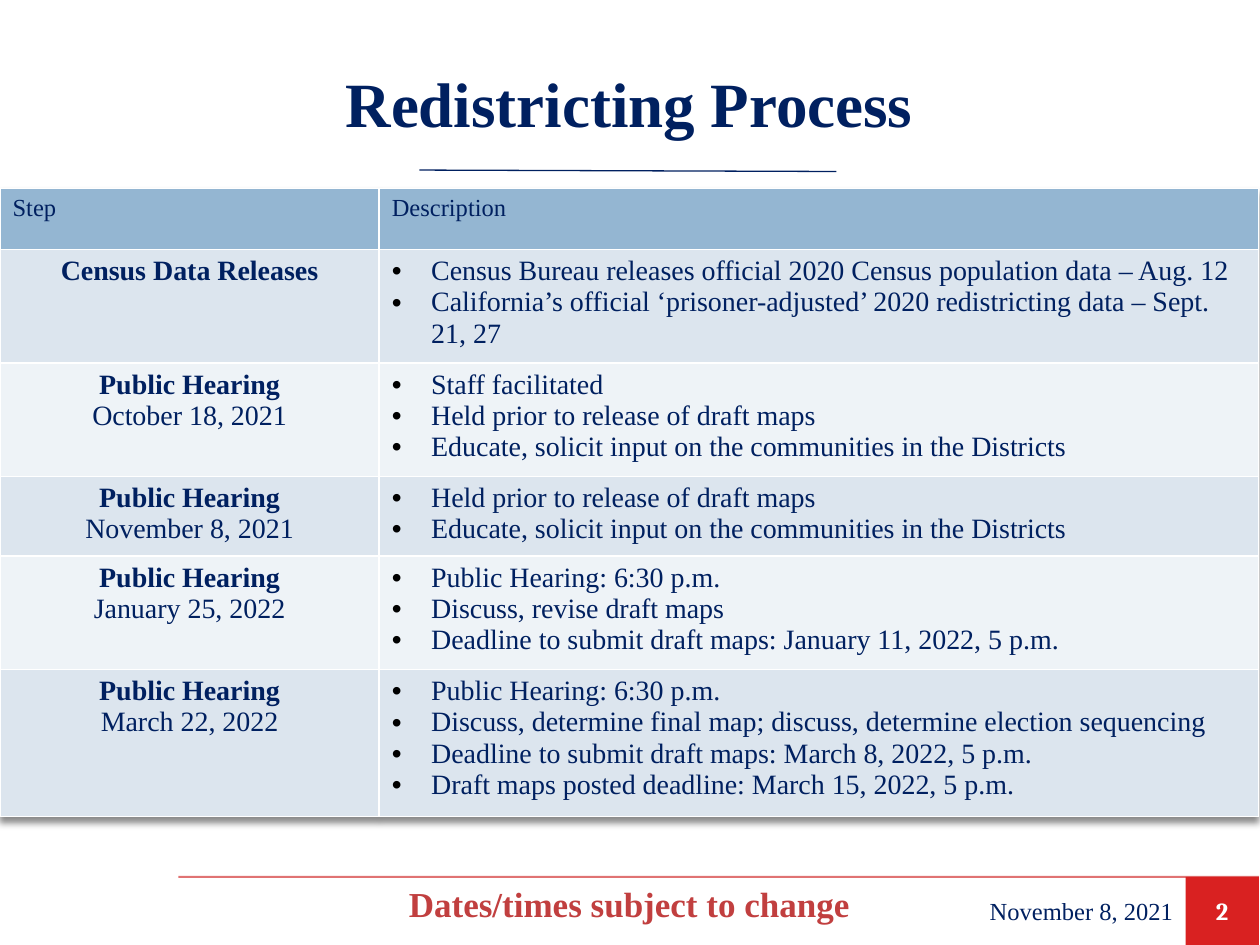
from lxml import etree
from pptx import Presentation
from pptx.dml.color import RGBColor
from pptx.enum import shapes, text
from pptx.oxml import parse_xml
from pptx.oxml.ns import qn
from pptx.util import Pt

INK = {"navy": "002060", "red": "D92121", "rule": "C80000", "note": "C13F3F",
       "head": "94B6D2", "dark": "DCE5EE", "light": "EEF3F7",
       "white": "FFFFFF", "black": "000000"}
NS = 'xmlns:a="http://schemas.openxmlformats.org/drawingml/2006/main"'
SERIF = "Times New Roman"
LEFT, MID, RIGHT = text.PP_ALIGN.LEFT, text.PP_ALIGN.CENTER, text.PP_ALIGN.RIGHT
HEARING = "Public Hearing"
EDUCATE = "Educate, solicit input on the communities in the Districts"
PRIOR = "Held prior to release of draft maps"
TIME = "Public Hearing: 6:30 p.m."

# Row height, step, date, description
STEPS = [
    (60.6, "Census Data Releases", None, [
        "Census Bureau releases official 2020 Census population data – Aug. 12",
        "California’s official ‘prisoner-adjusted’ 2020 redistricting data – Sept. 21, 27"]),
    (60.6, HEARING, "October 18, 2021", ["Staff facilitated", PRIOR, EDUCATE]),
    (43.5, HEARING, "November 8, 2021", [PRIOR, EDUCATE]),
    (60.6, HEARING, "January 25, 2022", [
        TIME, "Discuss, revise draft maps",
        "Deadline to submit draft maps: January 11, 2022, 5 p.m."]),
    (78.3, HEARING, "March 22, 2022", [
        TIME, "Discuss, determine final map; discuss, determine election sequencing",
        "Deadline to submit draft maps: March 8, 2022, 5 p.m.",
        "Draft maps posted deadline: March 15, 2022, 5 p.m."]),
]


def color(name):
    return RGBColor.from_string(INK[name])


def style(para, size, ink="navy", bold=False, align=LEFT, face=SERIF):
    para.alignment = align
    for run in para.runs:
        font = run.font
        font.name, font.size, font.bold = face, Pt(size), bold
        font.color.rgb = color(ink)


def label(slide, box, words, size, anchor=text.MSO_ANCHOR.MIDDLE, **look):
    frame = slide.shapes.add_textbox(*map(Pt, box)).text_frame
    frame.word_wrap = True
    frame.vertical_anchor = anchor
    frame.text = words
    style(frame.paragraphs[0], size, **look)


def rule(slide, start, end, ink, width, alpha=None):
    line = slide.shapes.add_connector(
        shapes.MSO_CONNECTOR.STRAIGHT, *map(Pt, start + end))
    line.line.color.rgb = color(ink)
    line.line.width = Pt(width)
    props = line._element.spPr
    if alpha:
        tone = props.find(".//" + qn("a:srgbClr"))
        etree.SubElement(tone, qn("a:alpha")).set("val", str(alpha * 1000))
    etree.SubElement(props, qn("a:effectLst"))


def bullet(para):
    props = para._p.get_or_add_pPr()
    props.set("marL", str(Pt(22.5)))
    props.set("indent", str(-Pt(22.5)))
    for xml in (f'<a:buClr {NS}><a:srgbClr val="{INK["black"]}"/></a:buClr>',
                f'<a:buFont {NS} typeface="Arial"/>',
                f'<a:buChar {NS} char="•"/>'):
        props.append(parse_xml(xml))


def paint(cell, ink):
    """Fill a cell and give it thin white borders."""
    cell.fill.solid()
    cell.fill.fore_color.rgb = color(ink)
    props = cell._tc.get_or_add_tcPr()
    for i, side in enumerate("LRTB"):
        props.insert(i, parse_xml(
            f'<a:ln{side} {NS} w="{Pt(1)}"><a:solidFill>'
            f'<a:srgbClr val="{INK["white"]}"/></a:solidFill></a:ln{side}>'))


def shade(table):
    """Cast a soft shadow below the table."""
    table._tbl.tblPr.insert(0, parse_xml(
        f'<a:effectLst {NS}><a:outerShdw blurRad="{Pt(4)}" dist="{Pt(3)}" '
        f'dir="5400000" rotWithShape="0"><a:srgbClr val="{INK["black"]}">'
        f'<a:alpha val="45000"/></a:srgbClr></a:outerShdw></a:effectLst>'))


def process(slide, box):
    left, top, width, head = box
    high = head + sum(step[0] for step in STEPS)
    table = slide.shapes.add_table(
        len(STEPS) + 1, 2, Pt(left), Pt(top), Pt(width), Pt(high)).table
    shade(table)
    first = 216.7
    table.columns[0].width = Pt(first)
    table.columns[1].width = Pt(width - first)
    table.rows[0].height = Pt(head)
    for col, words in enumerate(("Step", "Description")):
        cell = table.cell(0, col)
        cell.text = words
        style(cell.text_frame.paragraphs[0], 14)
        paint(cell, "head")
    for row, (tall, name, date, points) in enumerate(STEPS, 1):
        table.rows[row].height = Pt(tall)
        step, about = table.cell(row, 0), table.cell(row, 1)
        step.text = f"{name}\n{date}" if date else name
        for i, para in enumerate(step.text_frame.paragraphs):
            style(para, 16, bold=i == 0, align=MID)
        about.text = "\n".join(points)
        for para in about.text_frame.paragraphs:
            bullet(para)
            style(para, 16)
        for cell in (step, about):
            paint(cell, "dark" if row % 2 else "light")


def header(slide, box):
    left, top, width, high = box
    label(slide, box, "Redistricting Process", 36, bold=True, align=MID)
    base = top + high
    rule(slide, (left + 213, base), (left + 451.3, base + 0.8), "navy", 0.75)


def footer(slide, box):
    left, top, width, high = box
    right, side = left + width, 41.8
    rule(slide, (left + 102, top), (right, top), "rule", 1.25, 55)
    page = slide.shapes.add_shape(
        shapes.MSO_SHAPE.RECTANGLE, *map(Pt, (right - side, top, side, high)))
    page.shadow.inherit = False
    page.fill.solid()
    page.fill.fore_color.rgb = color("red")
    page.line.fill.background()
    page.text_frame.text = "2"
    page.text_frame.vertical_anchor = text.MSO_ANCHOR.MIDDLE
    style(page.text_frame.paragraphs[0], 14, "white", True, MID, "Cambria")
    label(slide, (right - side - 125.2, top, 125.2, high),
          "November 8, 2021", 14, align=RIGHT)
    label(slide, (left, top - 0.5, width, 36.7), "Dates/times subject to change",
          20, text.MSO_ANCHOR.TOP, ink="note", bold=True, align=MID)


def main():
    deck = Presentation()
    deck.slide_width, deck.slide_height = Pt(720), Pt(540)
    slide = deck.slides.add_slide(deck.slide_layouts[6])
    header(slide, (26.6, 19.4, 666, 77.8))
    process(slide, (0, 107.6, 719.3, 35))
    footer(slide, (0, 501.1, 719.3, 38.9))
    deck.save("out.pptx")


if __name__ == "__main__":
    main()
